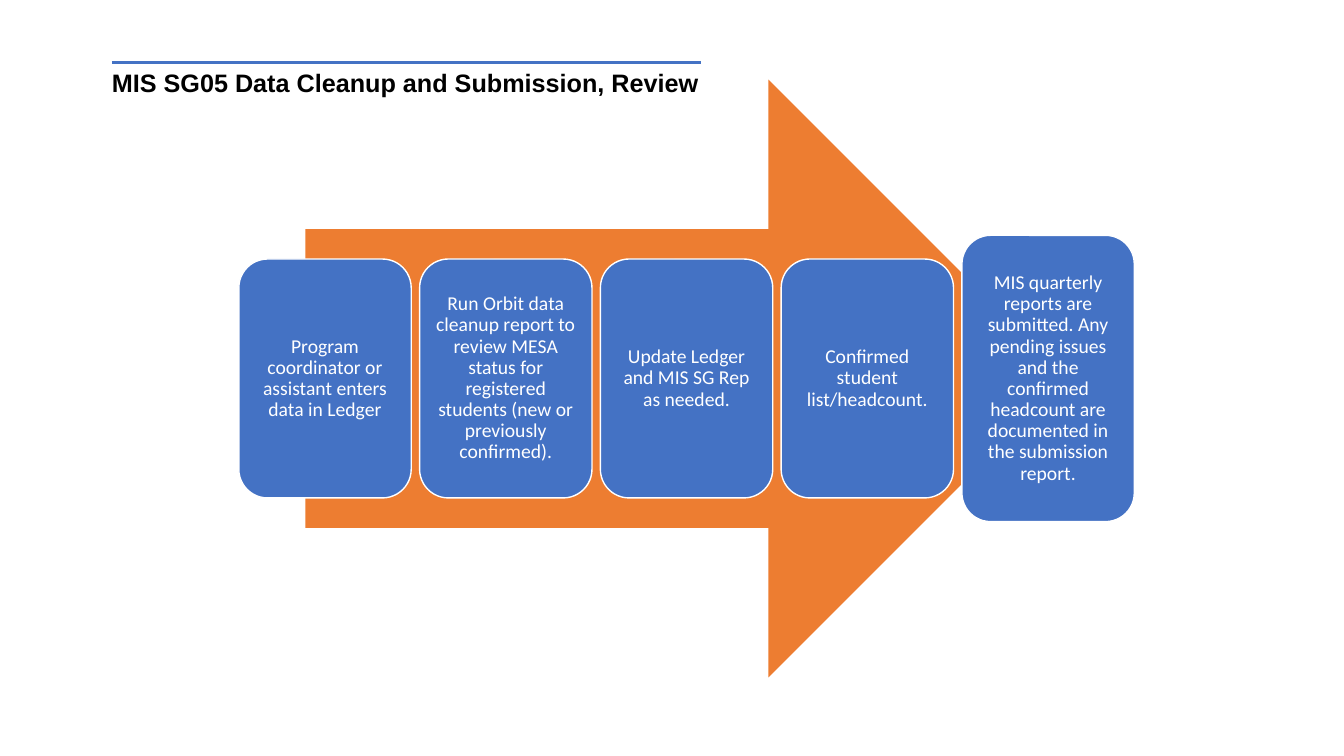
"""Builds a slide showing the five steps of data cleanup and submission on an arrow."""
from pptx import Presentation
from pptx.dml.color import RGBColor
from pptx.enum.shapes import MSO_CONNECTOR as Connector, MSO_SHAPE as Shape
from pptx.enum.text import MSO_ANCHOR as Anchor, MSO_AUTO_SIZE as AutoSize, PP_ALIGN as Align
from pptx.oxml.ns import qn
from pptx.util import Inches, Pt
from lxml.etree import SubElement

COLORS = {"arrow": "ED7D31", "accent": "4472C4", "light": "FFFFFF", "title": "000000"}
COLUMNS, ROWS = 160, 90
MIDDLE_ROW = 45.06
FIRST_COLUMN, STEP_PITCH, STEP_WIDTH = 28.44, 21.52, 20.52
STEPS = [
    ("Program coordinator or assistant enters data in Ledger", 28.44),
    ("Run Orbit data cleanup report to review MESA status for registered "
     "students (new or previously confirmed).", 28.44),
    ("Update Ledger and MIS SG Rep as needed.", 28.44),
    ("Confirmed student list/headcount.", 28.44),
    ("MIS quarterly reports are submitted. Any pending issues and the confirmed "
     "headcount are documented in the submission report.", 34.08),
]


class SlideBuilder:
    def __init__(self, presentation):
        self.column = presentation.slide_width / COLUMNS
        self.row = presentation.slide_height / ROWS
        self.slide = presentation.slides.add_slide(presentation.slide_layouts[5])

    def place(self, left, top, width, height):
        return (round(left * self.column), round(top * self.row),
                round(width * self.column), round(height * self.row))

    def color(self, name):
        return RGBColor.from_string(COLORS[name])

    def set_text(self, shape, text, font, size, color, align, bold=False):
        frame = shape.text_frame
        frame.word_wrap = True
        frame.auto_size = AutoSize.NONE
        frame.vertical_anchor = Anchor.MIDDLE
        paragraph = frame.paragraphs[0]
        paragraph.text = text
        paragraph.alignment = align
        paragraph.font.name = font
        paragraph.font.size = Pt(size)
        paragraph.font.bold = bold
        paragraph.font.color.rgb = self.color(color)
        return frame

    def title(self, text, *area):
        shape = self.slide.shapes.title
        shape.left, shape.top, shape.width, shape.height = self.place(*area)
        self.set_text(shape, text, "Arial", 18, "title", Align.LEFT, bold=True)

    def shape(self, kind, fill, left, width, height):
        area = self.place(left, MIDDLE_ROW - height / 2, width, height)
        shape = self.slide.shapes.add_shape(kind, *area)
        shape.shadow.inherit = False
        shape.fill.solid()
        shape.fill.fore_color.rgb = self.color(fill)
        shape.line.fill.background()
        return shape

    def step(self, text, left, height):
        shape = self.shape(Shape.ROUNDED_RECTANGLE, "accent", left, STEP_WIDTH, height)
        shape.line.color.rgb = self.color("light")
        shape.line.width = Pt(1)
        frame = self.set_text(shape, text, "Calibri", 14, "light", Align.CENTER)
        frame.paragraphs[0].line_spacing = 0.9
        frame.margin_left = frame.margin_right = Inches(0.06)
        frame.margin_top = frame.margin_bottom = Inches(0.06)

    def rule(self, left, top, width):
        x, y, length, _ = self.place(left, top, width, 0)
        line = self.slide.shapes.add_connector(Connector.STRAIGHT, x, y, x + length, y)
        line.line.color.rgb = self.color("accent")
        line.line.width = Pt(2.25)
        SubElement(line._element.spPr, qn("a:effectLst"))


def main():
    presentation = Presentation()
    presentation.slide_width = Inches(13.33)
    presentation.slide_height = Inches(7.5)
    builder = SlideBuilder(presentation)
    builder.shape(Shape.RIGHT_ARROW, "arrow", 36.36, 90.72, 71.16)
    for index, (text, height) in enumerate(STEPS):
        builder.step(text, FIRST_COLUMN + index * STEP_PITCH, height)
    builder.title("MIS SG05 Data Cleanup and Submission, Review", 12.12, 7.44, 110.76, 4.8)
    builder.rule(13.32, 7.44, 70.08)
    presentation.save("out.pptx")


if __name__ == "__main__":
    main()
